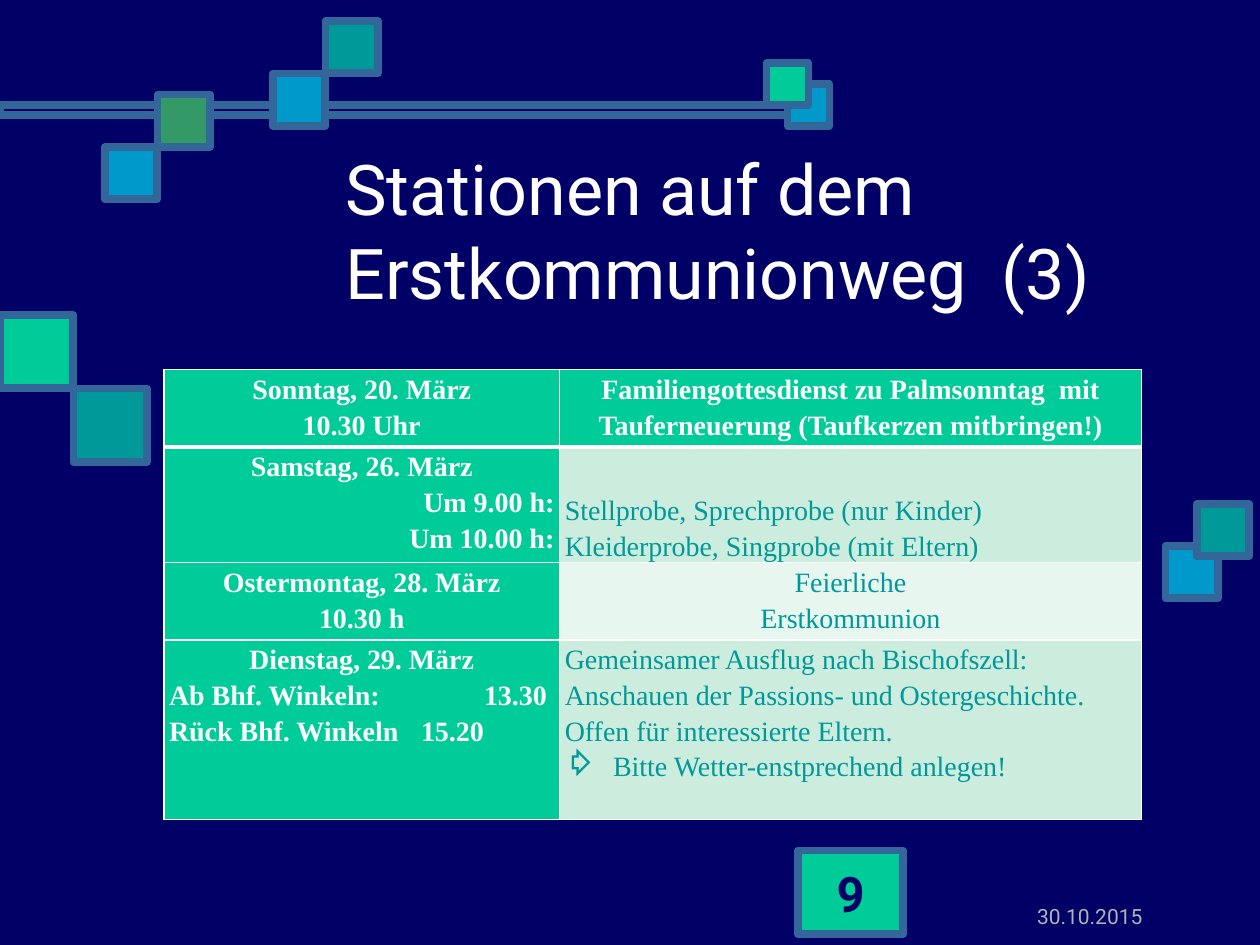
from lxml import etree
from pptx import Presentation
from pptx import util as u
from pptx.dml.color import RGBColor
from pptx.enum import shapes, text
from pptx.oxml import ns

PX = 7620
NAVY = RGBColor(0x00, 0x00, 0x66)
STEEL = RGBColor(0x33, 0x66, 0x99)
BLUE = RGBColor(0x00, 0x99, 0xCC)
MINT = RGBColor(0x00, 0xCC, 0x99)
TEAL = RGBColor(0x00, 0x99, 0x99)
GREEN = RGBColor(0x33, 0x99, 0x66)
WHITE = RGBColor(0xFF, 0xFF, 0xFF)
GREY = RGBColor(0xB2, 0xB2, 0xB2)
PALE = RGBColor(0xCC, 0xEC, 0xDE)
PALER = RGBColor(0xE7, 0xF6, 0xEF)

LEFT, CENTER, RIGHT = (text.PP_ALIGN.LEFT, text.PP_ALIGN.CENTER,
                       text.PP_ALIGN.RIGHT)
TOP, MIDDLE, BOTTOM = (text.MSO_ANCHOR.TOP, text.MSO_ANCHOR.MIDDLE,
                       text.MSO_ANCHOR.BOTTOM)


class Deck:
    heading_font = "Roboto"
    table_font = "Times New Roman"

    def __init__(self, width, height):
        self.prs = Presentation()
        self.prs.slide_width = self.px(width)
        self.prs.slide_height = self.px(height)
        self.s = self.prs.slides.add_slide(self.prs.slide_layouts[6])
        fill = self.s.background.fill
        fill.solid()
        fill.fore_color.rgb = NAVY

    def px(self, n):
        return u.Emu(n * PX)

    def box(self, *at):
        return [self.px(n) for n in at]

    def style(self, p, size, color, font, align=LEFT, bold=False):
        p.alignment = align
        for r in p.runs:
            r.font.size = u.Pt(size)
            r.font.name = font
            r.font.bold = bold
            r.font.color.rgb = color

    def rect(self, x, y, w, h, color=None):
        sp = self.s.shapes.add_shape(shapes.MSO_SHAPE.RECTANGLE,
                                     *self.box(x, y, w, h))
        sp.shadow.inherit = False
        sp.line.color.rgb = STEEL
        sp.line.width = u.Pt(4.5)
        if color is None:
            sp.fill.background()
        else:
            sp.fill.solid()
            sp.fill.fore_color.rgb = color
        return sp

    def label(self, words, at, size, color, anchor, align=LEFT):
        tf = self.s.shapes.add_textbox(*self.box(*at)).text_frame
        tf.word_wrap = True
        tf.vertical_anchor = anchor
        tf.text = words
        self.style(tf.paragraphs[0], size, color, self.heading_font, align)

    def badge(self, words, at):
        tf = self.rect(*at, MINT).text_frame
        tf.word_wrap = False
        tf.vertical_anchor = MIDDLE
        tf.text = words
        self.style(tf.paragraphs[0], 28, NAVY, self.heading_font, CENTER, True)

    def border(self, cell, side, width):
        ln = etree.SubElement(cell._tc.get_or_add_tcPr(), ns.qn("a:ln" + side),
                              w=str(u.Pt(width)))
        fill = etree.SubElement(ln, ns.qn("a:solidFill"))
        etree.SubElement(fill, ns.qn("a:srgbClr"), val=str(WHITE))

    def bullet(self, p, char, indent):
        pPr = p._p.get_or_add_pPr()
        pPr.set("marL", str(self.px(indent)))
        pPr.set("indent", str(-self.px(indent)))
        etree.SubElement(pPr, ns.qn("a:buChar"), char=char)

    def cell(self, cell, lines, fill, color, bold, anchor, rules):
        for side, width in zip("LRTB", rules):
            self.border(cell, side, width)
        cell.fill.solid()
        cell.fill.fore_color.rgb = fill
        cell.margin_left = cell.margin_right = self.px(5)
        cell.margin_top = cell.margin_bottom = 0
        cell.vertical_anchor = anchor
        tf = cell.text_frame
        tf.text = "\n".join(words for words, _ in lines)
        for p, (_, align) in zip(tf.paragraphs, lines):
            p.line_spacing = 1.15
            self.style(p, 16, color, self.table_font, align, bold)

    def table(self, x, y, cols, heights, rows):
        tbl = self.s.shapes.add_table(
            len(rows), len(cols),
            *self.box(x, y, sum(cols), sum(heights))).table
        for col, w in zip(tbl.columns, cols):
            col.width = self.px(w)
        for row, h in zip(tbl.rows, heights):
            row.height = self.px(h)
        for i, (date, event, fill, anchor) in enumerate(rows):
            rules = (1, 1, 3 if i == 1 else 1, 3 if i == 0 else 1)
            head = i == 0
            self.cell(tbl.cell(i, 0), date, MINT, WHITE, True, TOP, rules)
            self.cell(tbl.cell(i, 1), event, fill, WHITE if head else TEAL,
                      head, anchor, rules)
        return tbl


SQUARES = [
    (750, 80, 40, BLUE), (730, 60, 40, MINT),
    (1110, 520, 50, BLUE), (1140, 480, 50, TEAL),
    (0, 300, 70, MINT), (70, 370, 70, TEAL),
    (260, 70, 50, BLUE), (100, 140, 50, BLUE),
    (150, 90, 50, GREEN), (310, 20, 50, TEAL),
]

STATIONS = [
    ([("Sonntag, 20. März", CENTER), ("10.30 Uhr", CENTER)],
     [("Familiengottesdienst zu Palmsonntag  mit Tauferneuerung "
       "(Taufkerzen mitbringen!)", CENTER)], MINT, TOP),
    ([("Samstag, 26. März", CENTER), ("Um 9.00 h:", RIGHT),
      ("Um 10.00 h:", RIGHT)],
     [("Stellprobe, Sprechprobe (nur Kinder)", LEFT),
      ("Kleiderprobe, Singprobe (mit Eltern)", LEFT)], PALE, BOTTOM),
    ([("Ostermontag, 28. März", CENTER), ("10.30 h", CENTER)],
     [("Feierliche", CENTER), ("Erstkommunion", CENTER)], PALER, TOP),
    ([("Dienstag, 29. März", CENTER), ("Ab Bhf. Winkeln: \t\t13.30", LEFT),
      ("Rück Bhf. Winkeln\t15.20", LEFT)],
     [("Gemeinsamer Ausflug nach Bischofszell:  Anschauen der Passions- und "
       "Ostergeschichte. Offen für interessierte Eltern.", LEFT),
      ("Bitte Wetter-enstprechend anlegen!", LEFT)], PALE, TOP),
]


def main():
    deck = Deck(1200, 900)
    deck.rect(0, 100, 770, 10)
    for x, y, side, color in SQUARES:
        deck.rect(x, y, side, side, color)
    deck.label("Stationen auf dem Erstkommunionweg  (3)",
               (317, 124, 827, 190), 40, WHITE, MIDDLE)
    deck.label("30.10.2015", (860, 854, 240, 36), 12, GREY, BOTTOM, RIGHT)
    deck.badge("9", (760, 810, 100, 80))
    tbl = deck.table(156, 352, (377, 554), (68, 102, 68, 171), STATIONS)
    deck.bullet(tbl.cell(3, 1).text_frame.paragraphs[-1], "⇨", 46)
    deck.prs.save("out.pptx")


if __name__ == "__main__":
    main()
